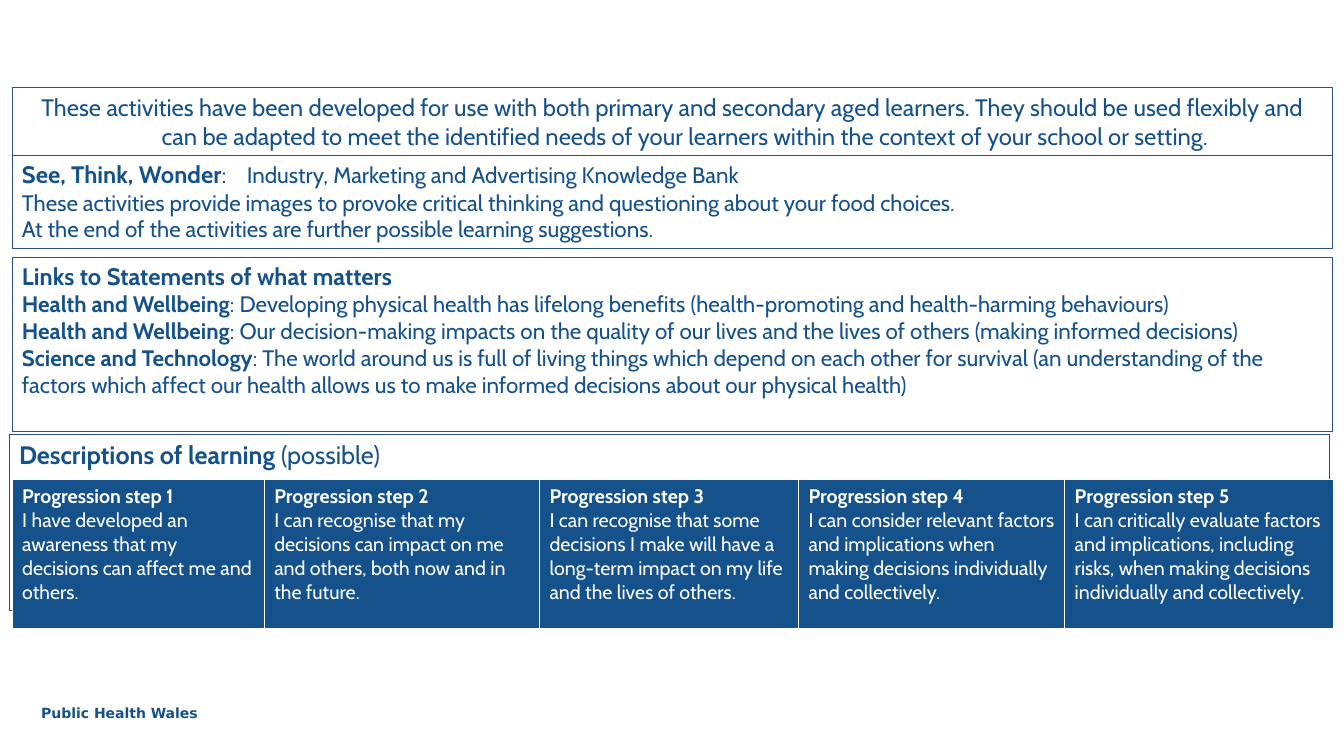
from lxml.etree import SubElement
from pptx import Presentation
from pptx.dml.color import RGBColor
from pptx.enum.shapes import MSO_SHAPE
from pptx.enum.text import MSO_ANCHOR, PP_ALIGN
from pptx.oxml.ns import qn
from pptx.util import Inches, Pt

NAVY = RGBColor(0x15, 0x51, 0x8B)
OUTLINE = RGBColor(0x28, 0x50, 0x87)
WHITE = RGBColor(0xFF, 0xFF, 0xFF)
BODY_FONT = "Cabin"
SLIDE_WIDTH, SLIDE_HEIGHT = Inches(13.33), Inches(7.5)
PANEL_LEFT, PANEL_WIDTH = 0.9, 98.27

INTRO = [
    (17, "", "These activities have been developed for use with both primary and secondary "
     "aged learners. They should be used flexibly and can be adapted to meet the identified "
     "needs of your learners within the context of your school or setting."),
]
ACTIVITY = [
    (17, "See, Think, Wonder", ":"),
    (16, "", "These activities provide images to provoke critical thinking and questioning "
     "about your food choices."),
    (16, "", "At the end of the activities are further possible learning suggestions."),
]
WHAT_MATTERS = [
    (17, "Links to Statements of what matters", ""),
    (16, "Health and Wellbeing", ": Developing physical health has lifelong benefits "
     "(health-promoting and health-harming behaviours)"),
    (16, "Health and Wellbeing", ": Our decision-making impacts on the quality of our lives "
     "and the lives of others (making informed decisions)"),
    (16, "Science and Technology", ": The world around us is full of living things which "
     "depend on each other for survival (an understanding of the factors which affect our "
     "health allows us to make informed decisions about our physical health)"),
]
LEARNING = [(18, "Descriptions of learning ", "(possible)")]
PROGRESSION = [
    (2.5, "I have developed an awareness that my decisions can affect me and others."),
    (2.73, "I can recognise that my decisions can impact on me and others, both now and in "
     "the future."),
    (2.57, "I can recognise that some decisions I make will have a long-term impact on my "
     "life and the lives of others."),
    (2.64, "I can consider relevant factors and implications when making decisions "
     "individually and collectively."),
    (2.67, "I can critically evaluate factors and implications, including risks, when "
     "making decisions individually and collectively."),
]


def area(left, top, width, height):
    """Turn percentages of the slide into a position and size."""
    return (int(SLIDE_WIDTH * left / 100), int(SLIDE_HEIGHT * top / 100),
            int(SLIDE_WIDTH * width / 100), int(SLIDE_HEIGHT * height / 100))


def style(font, size, color, name=BODY_FONT):
    font.name, font.size = name, Pt(size)
    font.color.rgb = color


def write(frame, lines, color=NAVY, font_name=BODY_FONT):
    """Fill a frame with (size, bold lead, plain rest) lines."""
    frame.word_wrap = True
    for index, (size, lead, rest) in enumerate(lines):
        paragraph = frame.paragraphs[0] if index == 0 else frame.add_paragraph()
        paragraph.alignment = PP_ALIGN.LEFT
        style(paragraph.font, size, color, font_name)
        for words, bold in ((lead, True), (rest, False)):
            if words:
                run = paragraph.add_run()
                run.text, run.font.bold = words, bold


def add_panel(slide, top, height, lines, left=PANEL_LEFT):
    panel = slide.shapes.add_shape(MSO_SHAPE.RECTANGLE, *area(left, top, PANEL_WIDTH, height))
    panel.shadow.inherit = False
    panel.fill.background()
    panel.line.color.rgb, panel.line.width = OUTLINE, Pt(0.75)
    panel.text_frame.vertical_anchor = MSO_ANCHOR.TOP
    write(panel.text_frame, lines)
    return panel.text_frame.paragraphs[0]


def hang_centred(paragraph):
    paragraph.alignment = PP_ALIGN.CENTER
    properties = paragraph._p.get_or_add_pPr()
    properties.set("marL", str(Inches(0.25)))
    properties.set("indent", str(-Inches(0.25)))


def add_topic(heading, topic):
    """Set the topic after the heading, at a tab stop."""
    properties = heading._p.get_or_add_pPr()
    stops = properties.makeelement(qn("a:tabLst"))
    SubElement(stops, qn("a:tab"), pos=str(Inches(2.23)), algn="l")
    properties.find(qn("a:defRPr")).addprevious(stops)
    run = heading.add_run()
    run.text = "\t" + topic
    run.font.size = Pt(16)


def add_borders(cell):
    properties = cell._tc.get_or_add_tcPr()
    for index, (side, points) in enumerate((("L", 1), ("R", 1), ("T", 1), ("B", 3))):
        border = properties.makeelement(qn(f"a:ln{side}"), {"w": str(Pt(points))})
        fill = SubElement(border, qn("a:solidFill"))
        SubElement(fill, qn("a:srgbClr"), val=str(WHITE))
        properties.insert(index, border)


def add_progression(slide, top, height):
    table = slide.shapes.add_table(
        1, len(PROGRESSION), *area(PANEL_LEFT, top, PANEL_WIDTH, height)).table
    for step, (width, description) in enumerate(PROGRESSION):
        table.columns[step].width = Inches(width)
        cell = table.cell(0, step)
        cell.fill.solid()
        cell.fill.fore_color.rgb = NAVY
        add_borders(cell)
        write(cell.text_frame, [(14, f"Progression step {step + 1}", ""),
                                (14, "", description)], WHITE)


def main():
    deck = Presentation()
    deck.slide_width, deck.slide_height = SLIDE_WIDTH, SLIDE_HEIGHT
    slide = deck.slides.add_slide(deck.slide_layouts[6])

    footer = slide.shapes.add_textbox(*area(2.33, 92.53, 13.58, 3.6))
    write(footer.text_frame, [(10, "Public Health Wales", "")], font_name="DejaVu Sans")

    hang_centred(add_panel(slide, 11.6, 8.93, INTRO))
    add_panel(slide, 34, 23.07, WHAT_MATTERS)
    add_panel(slide, 57.47, 23.33, LEARNING, left=0.68)
    add_topic(add_panel(slide, 20.53, 12.4, ACTIVITY),
              "Industry, Marketing and Advertising Knowledge Bank")
    add_progression(slide, 63.47, 19.87)

    deck.save("out.pptx")


if __name__ == "__main__":
    main()
